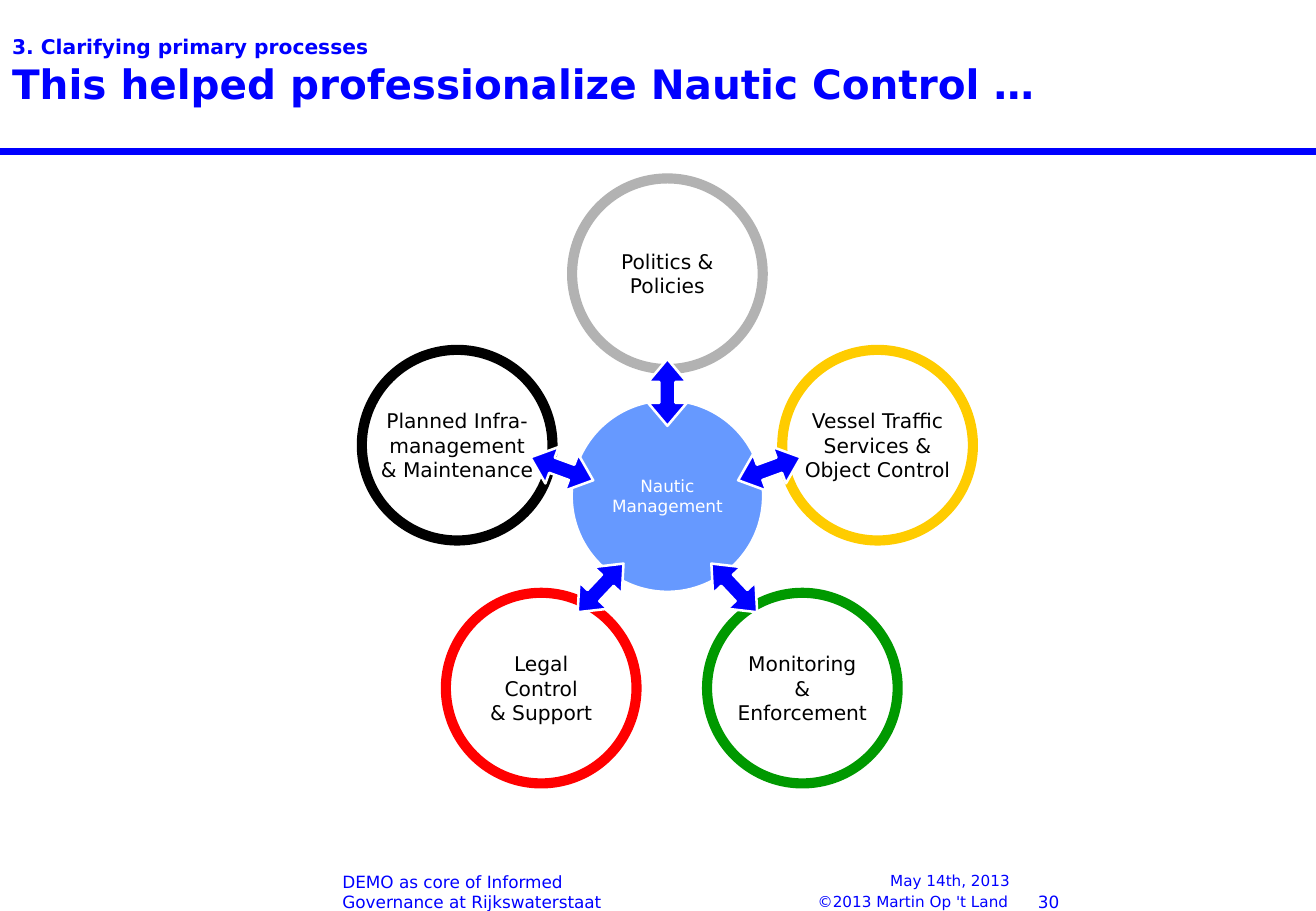
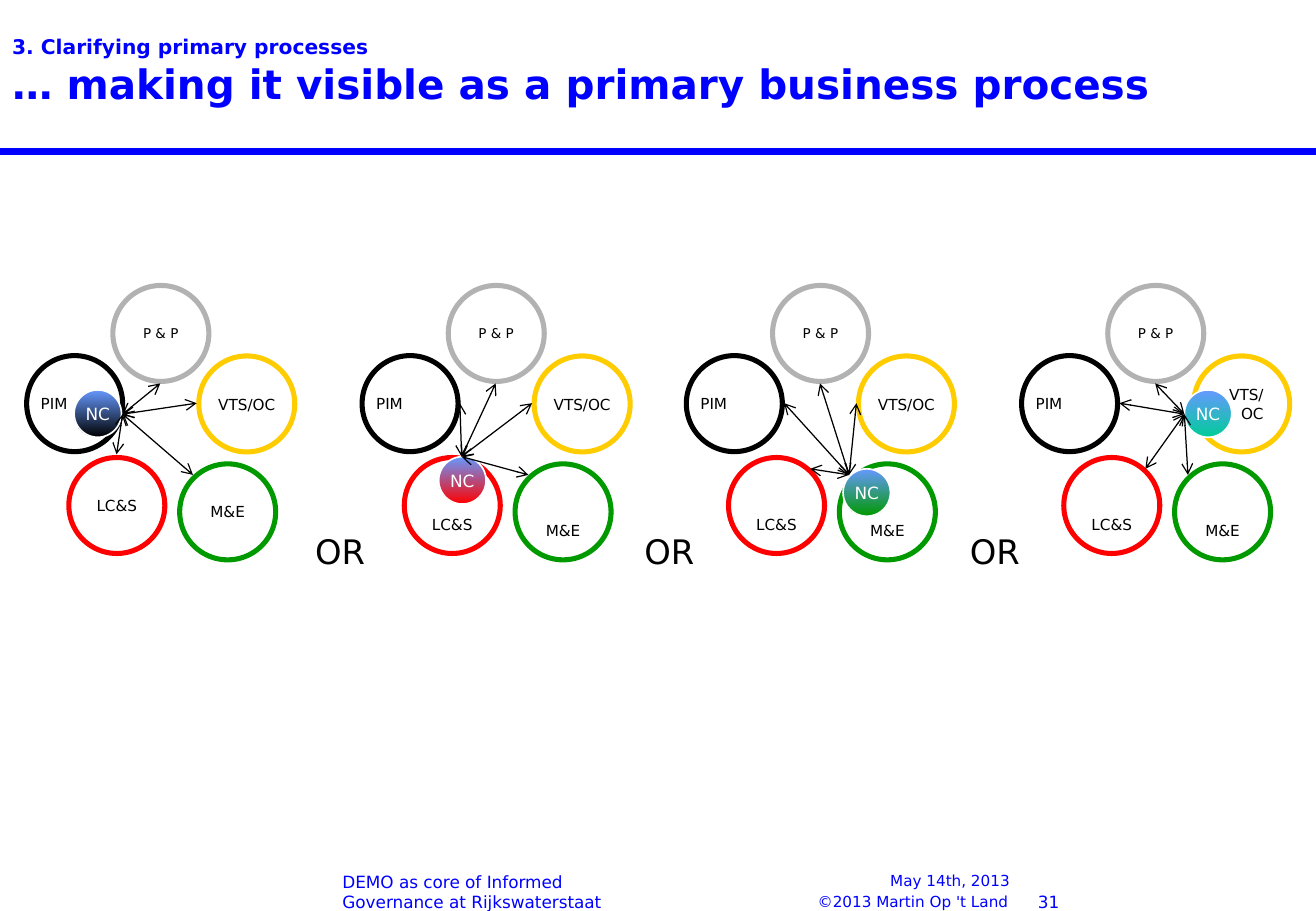
from dataclasses import dataclass, field
from typing import NamedTuple

from lxml.etree import SubElement
from pptx import Presentation
from pptx.dml.color import RGBColor
from pptx.enum.shapes import MSO_CONNECTOR, MSO_SHAPE
from pptx.enum.text import MSO_ANCHOR, MSO_AUTO_SIZE, PP_ALIGN
from pptx.oxml.ns import qn
from pptx.util import Pt


@dataclass(frozen=True)
class Theme:
    font: str = "DejaVu Sans"
    blue: str = "0000FF"
    hub: str = "6699FF"
    white: str = "FFFFFF"
    black: str = "000000"
    red: str = "FF0000"
    yellow: str = "FFCC00"
    green: str = "009900"
    grey: str = "B2B2B2"
    teal: str = "00CC99"
    title: int = 24
    choice: int = 20
    body: int = 12
    small: int = 10
    note: int = 9
    tiny: int = 8


T = Theme()


class Box(NamedTuple):
    x: float
    y: float
    w: float
    h: float


class Point(NamedTuple):
    x: float
    y: float


class Style(NamedTuple):
    size: int
    color: str = T.black
    align: PP_ALIGN = PP_ALIGN.CENTER
    anchor: MSO_ANCHOR = MSO_ANCHOR.MIDDLE
    wrap: bool = False
    inset: bool = True


class Spoke(NamedTuple):
    """A process around the hub; offsets are from the hub's centre."""
    lines: tuple[str, ...]
    color: str
    circle: Point
    arrow: Point
    angle: float


class Process(NamedTuple):
    """A small process circle; positions are relative to its panel's left."""
    color: str
    corner: Point
    dock: Point
    text: str
    style: Style


@dataclass(frozen=True)
class Panel:
    left: float
    host: str
    color: str
    badge: Point
    start: Point
    docks: dict[str, Point] = field(default_factory=dict)
    texts: dict[str, tuple[str, ...]] = field(default_factory=dict)
    styles: dict[str, Style] = field(default_factory=dict)


DIAMETER, SMALL_DIAMETER, BADGE = 113, 56.9, 28.1
HUB = Point(395.6, 294.1)
SPOKES = [
    Spoke(("Planned Infra-", "management", "& Maintenance"), T.black,
          Point(-124.6, -30.2), Point(-62.6, -16.2), 20.1),
    Spoke(("Legal", "Control", "& Support"), T.red,
          Point(-74.8, 113.8), Point(-39.6, 54.4), 313.3),
    Spoke(("Vessel Traffic", "Services &", "Object Control"), T.yellow,
          Point(124.6, -30.2), Point(60.5, -16.2), 339.9),
    Spoke(("Monitoring", "&", "Enforcement"), T.green,
          Point(80, 113.8), Point(39.6, 54.4), 46.7),
    Spoke(("Politics &", "Policies"), T.grey,
          Point(0, -131.8), Point(0, -61.5), 270),
]

LABEL = Style(T.note)
LOW = Style(T.note, anchor=MSO_ANCHOR.BOTTOM)
LOWERED = {"LC&S": LOW, "M&E": LOW}
PROCESSES = {
    "PIM": Process(T.black, Point(0, 210.8), Point(58, 239), "PIM",
                   Style(T.note, align=PP_ALIGN.LEFT, inset=False)),
    "LC&S": Process(T.red, Point(25, 271.2), Point(73.4, 277.9), "LC&S", LABEL),
    "VTS/OC": Process(T.yellow, Point(102, 211), Point(100.8, 239), "VTS/OC", LABEL),
    "M&E": Process(T.green, Point(90.7, 275), Point(98.6, 281.5), "M&E", LABEL),
    "P & P": Process(T.grey, Point(51.1, 169.2), Point(79.2, 227.3), "P & P",
                     Style(T.tiny)),
}
PANELS = [
    Panel(15.8, "PIM", T.black, Point(28.1, 231.1), Point(56.9, 245.5),
          docks={"LC&S": Point(53.3, 269.3)}),
    Panel(214.6, "LC&S", T.red, Point(45.4, 270.7), Point(59, 270.7), styles=LOWERED),
    Panel(406.8, "M&E", T.green, Point(92.9, 277.9), Point(96.5, 281.5), styles=LOWERED),
    Panel(605.5, "VTS/OC", T.teal, Point(96.5, 231.1), Point(96.5, 245.5),
          texts={"VTS/OC": ("VTS/", "OC")},
          styles=LOWERED | {"VTS/OC": Style(T.note, align=PP_ALIGN.RIGHT)}),
]
CHOICE_LEFTS = (179.3, 374.4, 567.4)


def add_run(p, text: str, size: int, color: str, bold: bool = False) -> None:
    r = p.add_run()
    r.text = text
    r.font.name = T.font
    r.font.size = Pt(size)
    r.font.bold = bold
    r.font.color.rgb = RGBColor.from_string(color)


def write(tf, lines: tuple[str, ...], style: Style) -> None:
    tf.word_wrap = style.wrap
    tf.vertical_anchor = style.anchor
    if not style.inset:
        tf.margin_left = tf.margin_top = tf.margin_right = tf.margin_bottom = 0
    for i, line in enumerate(lines):
        p = tf.add_paragraph() if i else tf.paragraphs[0]
        p.alignment = style.align
        add_run(p, line, style.size, style.color)


def add_text(s, box: Box, text: str, style: Style) -> None:
    sp = s.shapes.add_textbox(*map(Pt, box))
    write(sp.text_frame, (text,), style)


def add_shape(s, kind: MSO_SHAPE, box: Box, line: str, width: float,
              fill: str | None = None, fill_end: str | None = None):
    """Draw a preset shape; fill_end makes a downward gradient."""
    sp = s.shapes.add_shape(kind, *map(Pt, box))
    sp.shadow.inherit = False
    sp.line.color.rgb = RGBColor.from_string(line)
    sp.line.width = Pt(width)
    if fill is None:
        sp.fill.background()
    elif fill_end is None:
        sp.fill.solid()
        sp.fill.fore_color.rgb = RGBColor.from_string(fill)
    else:
        sp.fill.gradient()
        sp.fill.gradient_angle = 270
        for stop, color in zip(sp.fill.gradient_stops, (fill, fill_end)):
            stop.color.rgb = RGBColor.from_string(color)
    return sp


def centred(p: Point, w: float, h: float) -> Box:
    return Box(p.x - w / 2, p.y - h / 2, w, h)


def add_line(s, start: Point, end: Point, color: str, width: float,
             arrows: bool = False) -> None:
    c = s.shapes.add_connector(MSO_CONNECTOR.STRAIGHT, *map(Pt, (*start, *end)))
    c.line.color.rgb = RGBColor.from_string(color)
    c.line.width = Pt(width)
    if arrows:
        ln = c.line._get_or_add_ln()
        for tag in ("a:headEnd", "a:tailEnd"):
            SubElement(ln, qn(tag), type="arrow")
    SubElement(c._element.spPr, qn("a:effectLst"))


def add_slide(prs, title: str, number: int):
    """Add a slide with the shared heading, rule and footer."""
    s = prs.slides.add_slide(prs.slide_layouts[5])
    sp = s.shapes.title
    sp.left, sp.top, sp.width, sp.height = map(Pt, (0, 0, 780, 84))
    tf = sp.text_frame
    tf.auto_size = MSO_AUTO_SIZE.NONE
    tf.vertical_anchor = MSO_ANCHOR.MIDDLE
    p = tf.paragraphs[0]
    p.alignment = PP_ALIGN.LEFT
    add_run(p, "3. Clarifying primary processes", T.body, T.blue, True)
    p.add_line_break()
    add_run(p, title, T.title, T.blue, True)

    add_line(s, Point(0, 90), Point(780, 90), T.blue, 4)
    left, right = PP_ALIGN.LEFT, PP_ALIGN.RIGHT
    top, bottom = MSO_ANCHOR.TOP, MSO_ANCHOR.BOTTOM
    for box, text, size, align, anchor, wrap in (
        (Box(484.6, 529.2, 114.5, 10.8), "©2013 Martin Op 't Land",
         T.note, left, bottom, False),
        (Box(481, 516.2, 117.4, 26), "May 14th, 2013", T.note, right, top, True),
        (Box(203, 515.5, 158.4, 25.2),
         "DEMO as core of Informed Governance at Rijkswaterstaat",
         T.small, left, bottom, True),
        (Box(599.8, 515.5, 28, 25.2), str(number), T.small, right, bottom, True),
    ):
        add_text(s, box, text, Style(size, T.blue, align, anchor, wrap, False))
    return s


def draw_hub(s) -> None:
    for spoke in SPOKES:
        centre = Point(HUB.x + spoke.circle.x, HUB.y + spoke.circle.y)
        sp = add_shape(s, MSO_SHAPE.OVAL, centred(centre, DIAMETER, DIAMETER),
                       spoke.color, 6)
        write(sp.text_frame, spoke.lines, Style(T.body))
    sp = add_shape(s, MSO_SHAPE.OVAL, centred(HUB, DIAMETER, DIAMETER),
                   T.white, 1, T.hub)
    write(sp.text_frame, ("Nautic", "Management"), Style(T.small, T.white))
    for spoke in SPOKES:
        centre = Point(HUB.x + spoke.arrow.x, HUB.y + spoke.arrow.y)
        sp = add_shape(s, MSO_SHAPE.LEFT_RIGHT_ARROW, centred(centre, 39.6, 23),
                       T.white, 1.5, T.blue)
        sp.adjustments[0], sp.adjustments[1] = 0.418, 0.593
        sp.rotation = spoke.angle


def draw_panel(s, panel: Panel) -> None:
    def place(p: Point) -> Point:
        return Point(panel.left + p.x, p.y)

    for name, process in PROCESSES.items():
        sp = add_shape(s, MSO_SHAPE.OVAL,
                       Box(*place(process.corner), SMALL_DIAMETER, SMALL_DIAMETER),
                       process.color, 3)
        write(sp.text_frame, panel.texts.get(name, (process.text,)),
              panel.styles.get(name, process.style))
    sp = add_shape(s, MSO_SHAPE.OVAL, Box(*place(panel.badge), BADGE, BADGE),
                   T.white, 1, T.hub, panel.color)
    write(sp.text_frame, ("NC",), Style(T.small, T.white))
    for name, process in PROCESSES.items():
        if name != panel.host:
            dock = panel.docks.get(name, process.dock)
            add_line(s, place(panel.start), place(dock), T.black, 0.75, arrows=True)


def main() -> None:
    prs = Presentation()
    prs.slide_width, prs.slide_height = Pt(780), Pt(540)
    draw_hub(add_slide(prs, "This helped professionalize Nautic Control …", 30))
    s = add_slide(prs, "… making it visible as a primary business process", 31)
    for panel in PANELS:
        draw_panel(s, panel)
    for left in CHOICE_LEFTS:
        add_text(s, Box(left, 311, 44.6, 31.7), "OR",
                 Style(T.choice, anchor=MSO_ANCHOR.TOP))
    prs.save("out.pptx")


if __name__ == "__main__":
    main()
